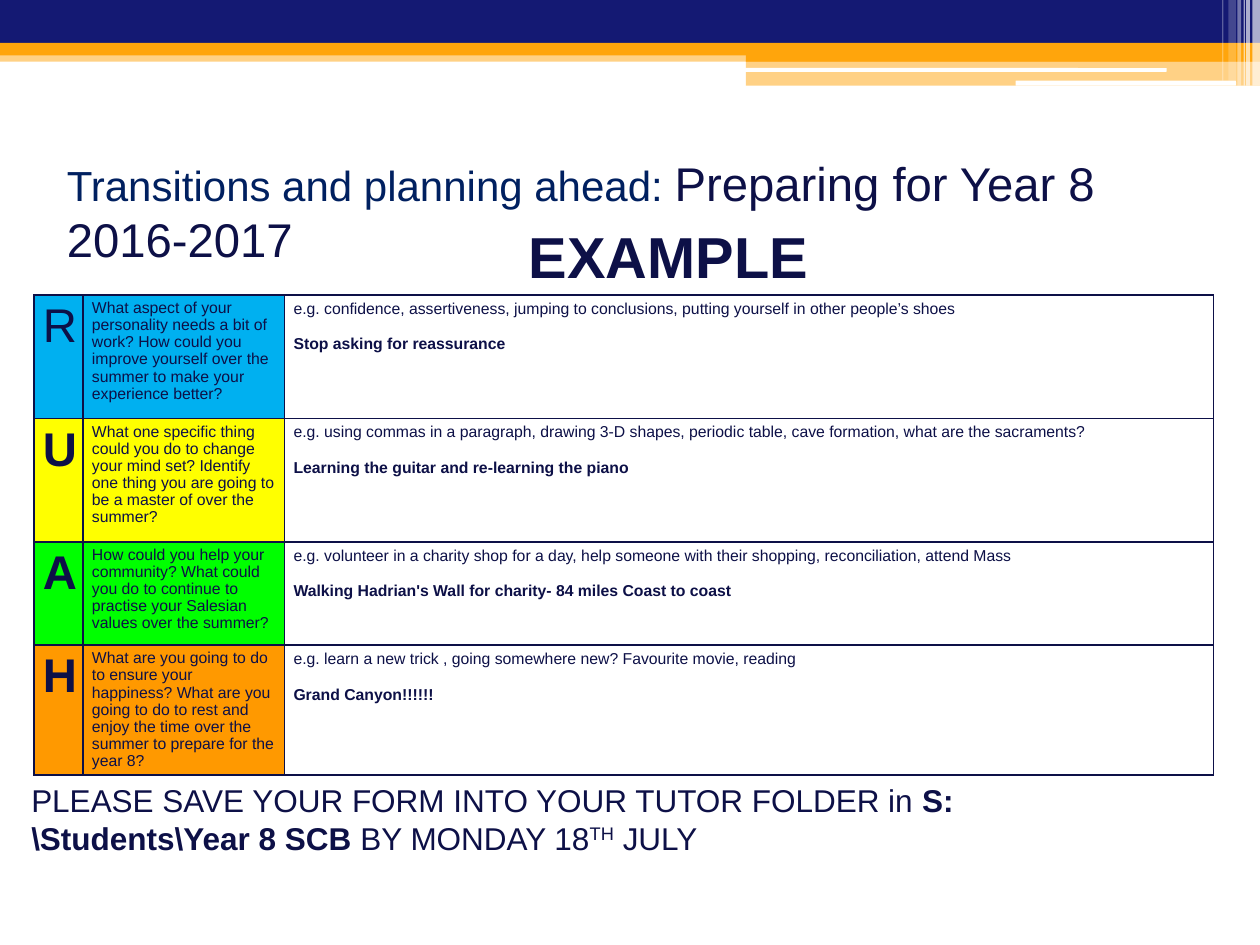
from pptx import Presentation
from pptx.dml.color import RGBColor
from pptx.enum.shapes import MSO_SHAPE
from pptx.enum.text import MSO_ANCHOR, PP_ALIGN
from pptx.oxml.ns import qn
from pptx.util import Inches, Pt
from lxml.etree import SubElement

COLORS = {
    "ink": "0D1047", "title": "002060", "navy": "141973", "amber": "FFA50C",
    "white": "FFFFFF", "blue": "00B0F0", "yellow": "FFFF00",
    "green": "00FF00", "orange": "FF9900",
}


def rgb(name):
    return RGBColor.from_string(COLORS[name])


def add_run(p, text, size, color="ink", bold=False):
    r = p.add_run()
    r.text = text
    r.font.name = "Arial"
    r.font.size = Pt(size)
    r.font.bold = bold
    r.font.color.rgb = rgb(color)
    return r


prs = Presentation()
prs.slide_width, prs.slide_height = Inches(10), Inches(7.5)
slide = prs.slides.add_slide(prs.slide_layouts[5])

# Header bands and stripes: left, top, width, height, colour, opacity %
RECT, ROUND = MSO_SHAPE.RECTANGLE, MSO_SHAPE.ROUNDED_RECTANGLE
header = [
    (RECT, 0, 0.4, 10, 0.09, "amber", 50),
    (RECT, 0, 0, 10, 0.34, "navy", 100),
    (RECT, 0, 0.34, 10, 0.1, "amber", 100),
    (RECT, 5.92, 0.39, 4.08, 0.1, "amber", 100),
    (RECT, 5.92, 0.48, 4.08, 0.2, "amber", 50),
    (ROUND, 5.91, 0.54, 3.35, 0.03, "white", 100),
    (ROUND, 8.06, 0.64, 1.75, 0.04, "white", 100),
    (RECT, 9.94, 0, 0.06, 0.68, "white", 65),
    (RECT, 9.89, 0, 0.03, 0.68, "white", 65),
    (RECT, 9.87, 0, 0.01, 0.68, "white", 60),
    (RECT, 9.82, 0, 0.03, 0.68, "white", 40),
    (RECT, 9.75, 0, 0.06, 0.64, "white", 20),
    (RECT, 9.7, 0, 0.01, 0.64, "white", 30),
]
for kind, left, top, width, height, color, opacity in header:
    sp = slide.shapes.add_shape(kind, Inches(left), Inches(top), Inches(width), Inches(height))
    sp.shadow.inherit = False
    sp.line.fill.background()
    sp.fill.solid()
    sp.fill.fore_color.rgb = rgb(color)
    if opacity < 100:
        clr = sp.fill._xPr.find(qn("a:solidFill"))[0]
        SubElement(clr, qn("a:alpha"), val=str(opacity * 1000))

# RUAH table
rows = [
    ("R", "blue", 0.98,
     "What aspect of your personality needs a bit of work? How could you improve "
     "yourself over the summer to make your experience better?",
     "e.g. confidence, assertiveness, jumping to conclusions, putting yourself in other people’s shoes",
     "Stop asking for reassurance"),
    ("U", "yellow", 0.98,
     "What one specific thing could you do to change your mind set? Identify one "
     "thing you are going to be a master of over the summer?",
     "e.g. using commas in a paragraph, drawing 3-D shapes, periodic table, cave formation, "
     "what are the sacraments?",
     "Learning the guitar and re-learning the piano"),
    ("A", "green", 0.82,
     "How could you help your community? What could you do to continue to practise "
     "your Salesian values over the summer?",
     "e.g. volunteer in a charity shop for a day, help someone with their shopping, "
     "reconciliation, attend Mass",
     "Walking Hadrian's Wall for charity- 84 miles Coast to coast"),
    ("H", "orange", 0.97,
     "What are you going to do to ensure your happiness? What are you going to do to "
     "rest and enjoy the time over the summer to prepare for the year 8?",
     "e.g. learn a new trick , going somewhere new? Favourite movie, reading",
     "Grand Canyon!!!!!!"),
]
table = slide.shapes.add_table(len(rows), 3, Inches(0.27), Inches(2.34),
                               Inches(9.36), Inches(3.75)).table
table.first_row = table.horz_banding = False
for column, width in zip(table.columns, (0.39, 1.6, 7.37)):
    column.width = Inches(width)

for i, (letter, color, height, question, hint, answer) in enumerate(rows):
    table.rows[i].height = Inches(height)
    cells = table.rows[i].cells
    for cell, fill in zip(cells, (color, color, None)):
        cell.margin_left = cell.margin_right = Inches(0.07)
        cell.margin_top = cell.margin_bottom = Inches(0.04)
        tcPr = cell._tc.get_or_add_tcPr()
        for side in ("lnL", "lnR", "lnT", "lnB"):
            ln = SubElement(tcPr, qn(f"a:{side}"), w=str(Pt(1)))
            line_fill = SubElement(ln, qn("a:solidFill"))
            SubElement(line_fill, qn("a:srgbClr"), val=COLORS["ink"])
        if fill:
            cell.fill.solid()
            cell.fill.fore_color.rgb = rgb(fill)
        else:
            cell.fill.background()

    add_run(cells[0].text_frame.paragraphs[0], letter, 27, bold=letter != "R")
    p = cells[1].text_frame.paragraphs[0]
    p.line_spacing = 0.97
    add_run(p, question, 9)
    tf = cells[2].text_frame
    add_run(tf.paragraphs[0], hint, 9)
    p = tf.add_paragraph()
    p.space_before = Pt(10.35)
    add_run(p, answer, 9, bold=True)

# Saving instructions
tf = slide.shapes.add_textbox(Inches(0.15), Inches(6.15), Inches(9.24), Inches(0.71)).text_frame
tf.word_wrap = True
p = tf.paragraphs[0]
add_run(p, "PLEASE SAVE YOUR FORM INTO YOUR TUTOR FOLDER in ", 18)
add_run(p, "S:\\Students\\Year 8 SCB ", 18, bold=True)
add_run(p, "BY MONDAY 18", 18)
r = add_run(p, "TH", 18)
r.font._element.set("baseline", "30000")
add_run(p, " JULY", 18)

# Title
title = slide.shapes.title
title.left, title.top, title.width, title.height = (
    Inches(0.43), Inches(1.17), Inches(9.35), Inches(1.01))
tf = title.text_frame
tf.word_wrap = True
tf.vertical_anchor = MSO_ANCHOR.TOP
p = tf.paragraphs[0]
p.alignment = PP_ALIGN.LEFT
add_run(p, "Transitions and planning ahead: ", 24, "title")
add_run(p, "Preparing for Year 8 2016-2017", 27)

# Example heading
tf = slide.shapes.add_textbox(Inches(4.1), Inches(1.7), Inches(4.34), Inches(0.66)).text_frame
tf.word_wrap = True
add_run(tf.paragraphs[0], "EXAMPLE", 33, bold=True)

prs.save("out.pptx")
